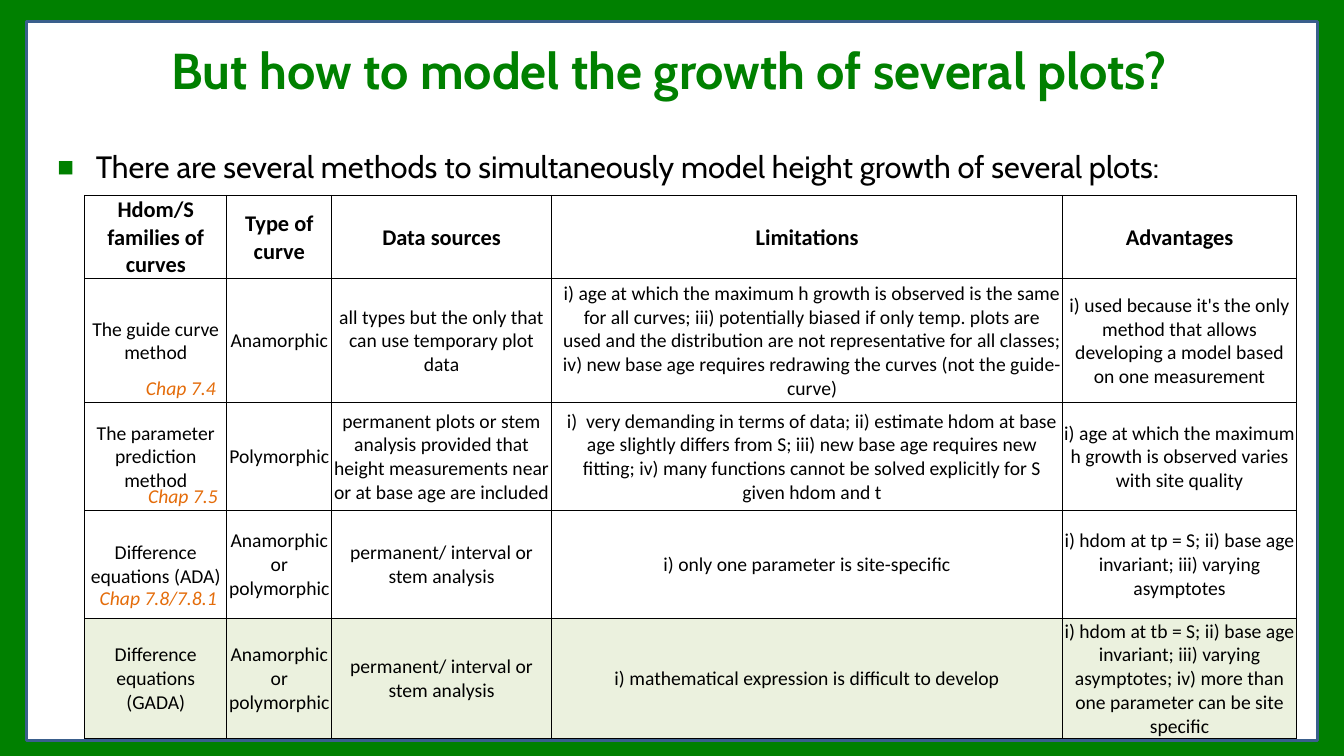
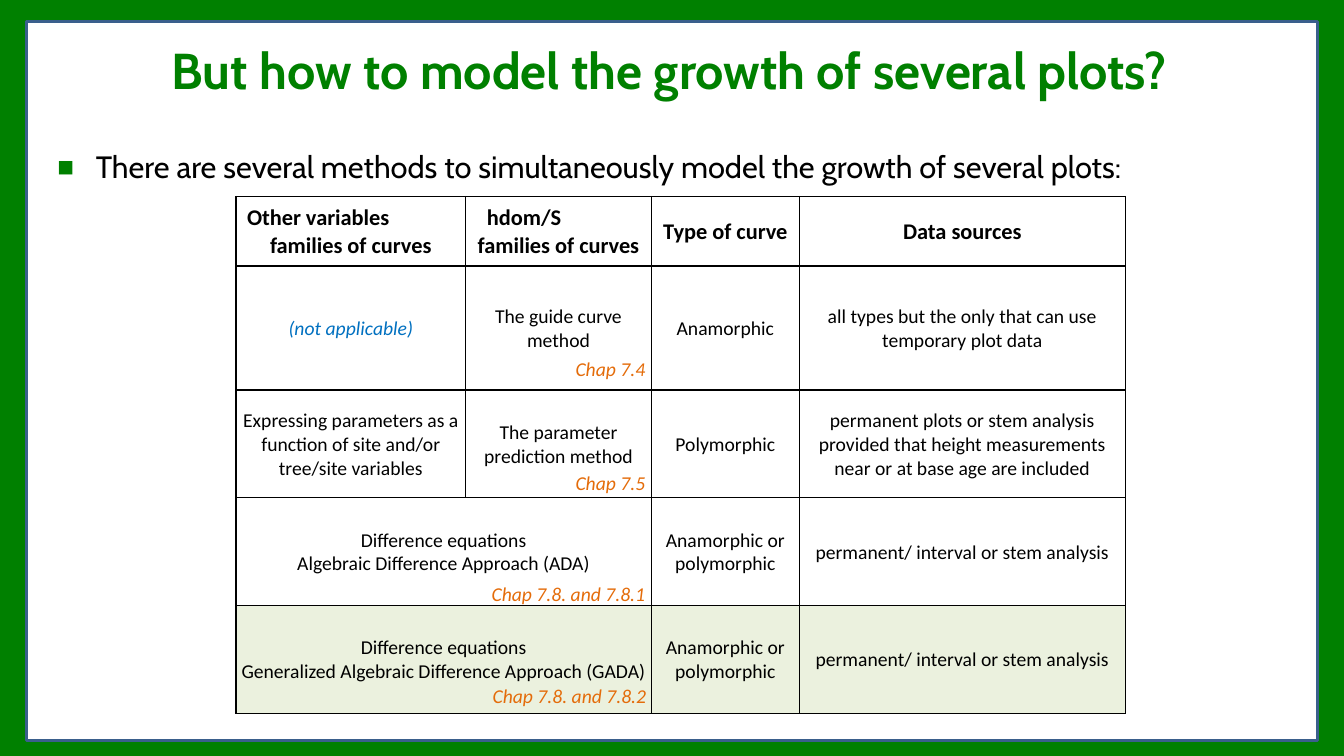
from lxml import etree
from pptx import Presentation
from pptx.dml.color import RGBColor
from pptx.enum.shapes import MSO_SHAPE
from pptx.enum.text import MSO_ANCHOR as Anchor, MSO_AUTO_SIZE as AutoSize, PP_ALIGN as Align
from pptx.oxml import parse_xml
from pptx.oxml.ns import nsdecls, qn
from pptx.util import Pt

EMU_PER_PX = 9144  # 100 px to the inch
SLIDE_W, SLIDE_H = 1333, 750

GREEN = RGBColor(0x00, 0x80, 0x00)
FRAME_BLUE = RGBColor(0x3A, 0x5F, 0x8C)
WHITE = RGBColor(0xFF, 0xFF, 0xFF)
BLACK = RGBColor(0x00, 0x00, 0x00)
ORANGE = RGBColor(0xE4, 0x6C, 0x0A)
NOTE_BLUE = RGBColor(0x00, 0x70, 0xC0)
PALE_GREEN = RGBColor(0xEB, 0xF1, 0xDE)

HEADING_FONT, TABLE_FONT = "Cabin", "Calibri"
TITLE = "But how to model the growth of several plots?"
ROW_HEIGHTS = [69, 123, 107, 107, 107]

# Wording that both tables use
GUIDE, PREDICTION = "The guide curve method", "The parameter prediction method"
EITHER_CURVE = "Anamorphic or polymorphic"
ANY_DATA = "all types but the only that can use temporary plot data"
BASE_AGE_DATA = ("permanent plots or stem analysis provided that height "
                 "measurements near or at base age are included")
INTERVAL_DATA = "permanent/ interval or stem analysis"

METHODS = [
    ["Hdom/S families of curves", "Type of curve", "Data sources", "Limitations", "Advantages"],
    [GUIDE, "Anamorphic", ANY_DATA,
     "i) age at which the maximum h growth is observed is the same for all curves; "
     "iii) potentially biased if only temp. plots are used and the distribution are not "
     "representative for all classes; iv) new base age requires redrawing the curves "
     "(not the guide-curve)",
     "i) used because it's the only method that allows developing a model based on one measurement"],
    [PREDICTION, "Polymorphic", BASE_AGE_DATA,
     "i)  very demanding in terms of data; ii) estimate hdom at base age slightly differs "
     "from S; iii) new base age requires new fitting; iv) many functions cannot be solved "
     "explicitly for S given hdom and t",
     "i) age at which the maximum h growth is observed varies with site quality"],
    ["Difference equations (ADA)", EITHER_CURVE, INTERVAL_DATA,
     "i) only one parameter is site-specific",
     "i) hdom at tp = S; ii) base age invariant; iii) varying asymptotes"],
    ["Difference equations (GADA)", EITHER_CURVE, INTERVAL_DATA,
     "i) mathematical expression is difficult to develop",
     "i) hdom at tb = S; ii) base age invariant; iii) varying asymptotes; "
     "iv) more than one parameter can be site specific"],
]

# None joins a cell to the one on its left
FAMILIES = [
    ["Other variables\nfamilies of curves", "hdom/S\nfamilies of curves",
     "Type of curve", "Data sources"],
    ["(not applicable)", GUIDE, "Anamorphic", ANY_DATA],
    ["Expressing parameters as a function of site and/or tree/site variables",
     PREDICTION, "Polymorphic", BASE_AGE_DATA],
    ["Difference equations\nAlgebraic Difference Approach (ADA)", None,
     EITHER_CURVE, INTERVAL_DATA],
    ["Difference equations\nGeneralized Algebraic Difference Approach (GADA)", None,
     EITHER_CURVE, INTERVAL_DATA],
]


def px(*lengths):
    emu = [length * EMU_PER_PX for length in lengths]
    return emu if len(emu) > 1 else emu[0]


def set_font(paragraph, name, size, color, bold=False, italic=False):
    font = paragraph.font
    font.name, font.size, font.bold, font.italic = name, Pt(size), bold, italic
    font.color.rgb = color


def indent(paragraph, left, first=0):
    props = paragraph._p.get_or_add_pPr()
    props.set("marL", str(px(left)))
    props.set("indent", str(px(first)))


def place(shape, box):
    shape.left, shape.top, shape.width, shape.height = px(*box)


# Shared layout: frame and placeholder positions
def add_frame(layout, slide):
    """Draw the green band and white panel, then move them behind the layout."""
    panels = [((0, 0, SLIDE_W, SLIDE_H), GREEN, GREEN),
              ((26, 21, 1281, 714), WHITE, FRAME_BLUE)]
    for order, (box, fill, line) in enumerate(panels):
        panel = slide.shapes.add_shape(MSO_SHAPE.RECTANGLE, *px(*box))
        panel.shadow.inherit = False
        panel.fill.solid()
        panel.fill.fore_color.rgb = fill
        panel.line.color.rgb = line
        panel.line.width = Pt(2)
        element = panel.element
        element.find(".//" + qn("p:cNvPr")).set("id", str(100 + order))
        layout.shapes.element.insert(2 + order, element)


def format_layout(layout):
    title, body = layout.placeholders[0], layout.placeholders[1]
    place(title, (26, 30, 1276, 77))
    title.text_frame.vertical_anchor = Anchor.MIDDLE
    place(body, (47, 131, 1239, 126))
    frame = body.text_frame
    frame.margin_left, frame.margin_top, frame.margin_right, frame.margin_bottom = px(10, 16, 39, 5)


# Slide elements
def add_headings(slide, statement):
    slide.shapes.title.text_frame.text = TITLE
    title = slide.shapes.title.text_frame.paragraphs[0]
    title.alignment = Align.CENTER
    set_font(title, HEADING_FONT, 36, GREEN, bold=True)

    body = slide.placeholders[1].text_frame
    body.text = statement
    bullet = body.paragraphs[0]
    bullet.alignment = Align.JUSTIFY
    bullet.space_before = Pt(0)
    indent(bullet, 38, -38)
    props = bullet._p.get_or_add_pPr()
    color = etree.SubElement(props, qn("a:buClr"))
    etree.SubElement(color, qn("a:srgbClr"), val=str(GREEN))
    etree.SubElement(props, qn("a:buSzPct"), val="90000")
    etree.SubElement(props, qn("a:buFont"), typeface="Arial")
    etree.SubElement(props, qn("a:buChar"), char="■")
    set_font(bullet, HEADING_FONT, 22, BLACK)


def add_borders(cell):
    props = cell._tc.get_or_add_tcPr()
    for order, side in enumerate("LRTB"):
        props.insert(order, parse_xml(
            f'<a:ln{side} {nsdecls("a")} w="{Pt(1)}"><a:solidFill>'
            f'<a:srgbClr val="{BLACK}"/></a:solidFill></a:ln{side}>'))


def format_cell(cell, header, highlighted):
    cell.vertical_anchor = Anchor.MIDDLE
    cell.margin_left = cell.margin_top = cell.margin_right = px(1)
    cell.margin_bottom = 0
    if highlighted:
        cell.fill.solid()
        cell.fill.fore_color.rgb = PALE_GREEN
    else:
        cell.fill.background()
    add_borders(cell)
    for paragraph in cell.text_frame.paragraphs:
        paragraph.alignment = Align.CENTER
        set_font(paragraph, TABLE_FONT, 16 if header else 14, BLACK, bold=header)


def add_methods_table(slide, left, top, widths, rows):
    """Header row on top, last row highlighted."""
    table = slide.shapes.add_table(
        len(rows), len(widths), *px(left, top, sum(widths), sum(ROW_HEIGHTS))).table
    table.first_row = table.horz_banding = False
    for column, width in zip(table.columns, widths):
        column.width = px(width)
    for r, texts in enumerate(rows):
        table.rows[r].height = px(ROW_HEIGHTS[r])
        for c, text in enumerate(texts):
            cell = table.cell(r, c)
            if text is None:
                table.cell(r, c - 1).merge(cell)
            else:
                cell.text = text
            format_cell(cell, r == 0, r == len(rows) - 1)
    return table


def add_chapter(slide, text, left, top, width=94):
    label = slide.shapes.add_textbox(*px(left, top, width, 34)).text_frame
    label.word_wrap = True
    label.auto_size = AutoSize.SHAPE_TO_FIT_TEXT
    label.text = text
    chapter = label.paragraphs[0]
    chapter.alignment = Align.RIGHT
    set_font(chapter, TABLE_FONT, 14, ORANGE, italic=True)


# Slides
def build_height_slide(slide):
    add_headings(slide, "There are several methods to simultaneously model "
                        "height growth of several plots:")
    table = add_methods_table(slide, 84, 194, [141, 104, 218, 507, 232], METHODS)
    for row in (1, 2):
        indent(table.cell(row, 3).text_frame.paragraphs[0], 10)
    add_chapter(slide, "Chap 7.4", 130, 368)
    add_chapter(slide, "Chap 7.5", 132, 475)
    add_chapter(slide, "Chap 7.8/7.8.1", 44, 576, 181)


def build_families_slide(slide):
    add_headings(slide, "There are several methods to simultaneously model "
                        "the growth of several plots:")
    table = add_methods_table(slide, 234, 195, [228, 184, 147, 323], FAMILIES)
    for column, offset in enumerate((10, 20)):
        first_line = table.cell(0, column).text_frame.paragraphs[0]
        first_line.alignment = Align.LEFT
        indent(first_line, offset)
    not_applicable = table.cell(1, 0).text_frame.paragraphs[0]
    set_font(not_applicable, TABLE_FONT, 14, NOTE_BLUE, italic=True)
    add_chapter(slide, "Chap 7.4", 556, 349)
    add_chapter(slide, "Chap 7.5", 556, 462)
    add_chapter(slide, "Chap 7.8. and 7.8.1", 469, 572, 181)
    add_chapter(slide, "Chap 7.8. and 7.8.2", 470, 674, 181)


def main():
    prs = Presentation()
    prs.slide_width, prs.slide_height = px(SLIDE_W, SLIDE_H)
    layout = prs.slide_layouts[1]
    format_layout(layout)
    height_slide, families_slide = (prs.slides.add_slide(layout) for _ in range(2))
    add_frame(layout, height_slide)
    build_height_slide(height_slide)
    build_families_slide(families_slide)
    prs.save("out.pptx")


if __name__ == "__main__":
    main()
